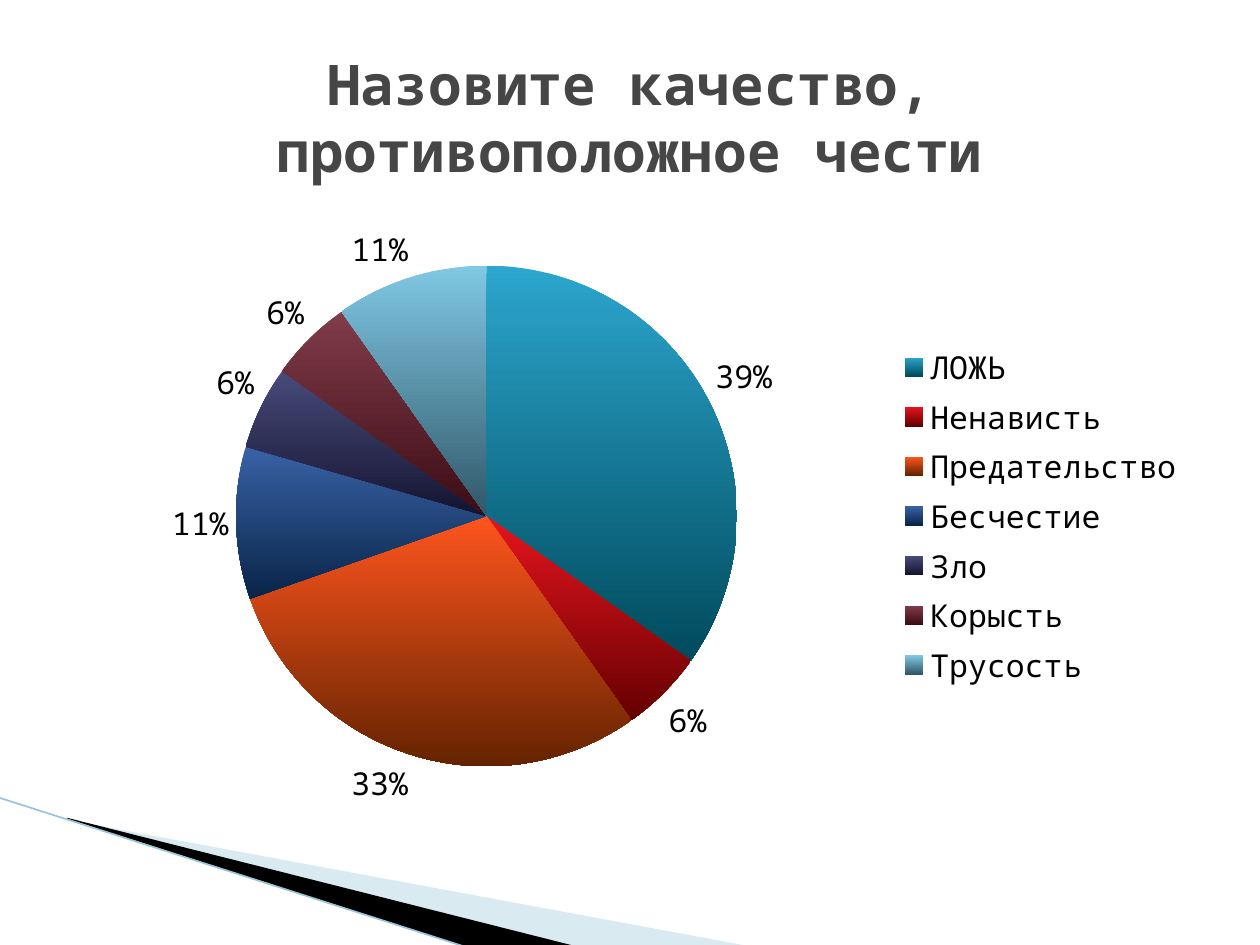
"""Build a survey slide with a title, a pie chart and corner wedges."""
from typing import NamedTuple

from lxml.etree import SubElement
from pptx import Presentation
from pptx.chart.data import CategoryChartData as ChartData
from pptx.dml.color import RGBColor
from pptx.enum.chart import XL_CHART_TYPE as Kind
from pptx.enum.chart import XL_LABEL_POSITION as Spot
from pptx.enum.chart import XL_LEGEND_POSITION as Side
from pptx.enum.shapes import MSO_CONNECTOR as Link
from pptx.enum.text import MSO_ANCHOR as Anchor
from pptx.enum.text import PP_ALIGN as Align
from pptx.oxml.ns import qn
from pptx.util import Inches, Pt

FACE = "Noto Sans Mono"
BLACK = RGBColor(0, 0, 0)
GREY = RGBColor(0x46, 0x46, 0x46)
PALE = RGBColor(0xA0, 0xCB, 0xDC)
EDGE = RGBColor(0x97, 0xC5, 0xD8)


class Slice(NamedTuple):
    name: str
    share: float
    top: RGBColor
    base: RGBColor


class Wedge(NamedTuple):
    points: list[tuple[float, float]]
    fill: RGBColor
    alpha: int


SLICES = [
    Slice("ЛОЖЬ", 0.39, RGBColor(0x2C, 0xA6, 0xCE), RGBColor(0x00, 0x4A, 0x5C)),
    Slice("Ненависть", 0.06, RGBColor(0xE6, 0x14, 0x1E), RGBColor(0x64, 0x00, 0x00)),
    Slice("Предательство", 0.33, RGBColor(0xFF, 0x55, 0x1E), RGBColor(0x64, 0x23, 0x00)),
    Slice("Бесчестие", 0.11, RGBColor(0x39, 0x62, 0xA5), RGBColor(0x08, 0x24, 0x48)),
    Slice("Зло", 0.06, RGBColor(0x48, 0x4A, 0x7A), RGBColor(0x14, 0x14, 0x30)),
    Slice("Корысть", 0.06, RGBColor(0x80, 0x3C, 0x4A), RGBColor(0x3C, 0x0C, 0x14)),
    Slice("Трусость", 0.11, RGBColor(0x80, 0xC8, 0xE4), RGBColor(0x30, 0x58, 0x68)),
]
WEDGES = [
    Wedge([(0.55, 6.51), (5.95, 7.51), (4.56, 7.51), (0.55, 6.5)], PALE, 40),
    Wedge([(0.53, 6.49), (4.57, 7.51), (3.72, 7.52), (0.54, 6.5)], BLACK, 100),
]


def put_text(shape, text: str, *, size: int, color: RGBColor, bold: bool = False) -> None:
    frame = shape.text_frame
    frame.word_wrap = True
    frame.vertical_anchor = Anchor.MIDDLE
    para = frame.paragraphs[0]
    para.alignment = Align.CENTER
    run = para.add_run()
    run.text = text
    font = run.font
    font.name, font.size, font.bold = FACE, Pt(size), bold
    font.color.rgb = color


def draw_wedge(shapes, wedge: Wedge) -> None:
    first, *rest = [(Inches(x), Inches(y)) for x, y in wedge.points]
    pen = shapes.build_freeform(*first)
    pen.add_line_segments(rest)
    shape = pen.convert_to_shape()
    shape.shadow.inherit = False
    shape.line.fill.background()
    shape.fill.solid()
    shape.fill.fore_color.rgb = wedge.fill
    if wedge.alpha < 100:
        tint = shape.fill._xPr.find(".//" + qn("a:srgbClr"))
        SubElement(tint, qn("a:alpha"), val=str(wedge.alpha * 1000))


def draw_edge(shapes) -> None:
    edge = shapes.add_connector(
        Link.STRAIGHT, Inches(-0.01), Inches(6.33), Inches(3.71), Inches(7.52))
    edge.line.color.rgb = EDGE
    edge.line.width = Pt(0.95)
    SubElement(edge._element.spPr, qn("a:effectLst"))


def draw_pie(shapes, slices: list[Slice]) -> None:
    data = ChartData(number_format="0%")
    data.categories = [part.name for part in slices]
    data.add_series("Series 1", [part.share for part in slices])
    chart = shapes.add_chart(
        Kind.PIE, Inches(0.5), Inches(1.62), Inches(9), Inches(4.95), data).chart
    chart.has_title = False
    chart.font.name, chart.font.size = FACE, Pt(18)
    chart.font.color.rgb = BLACK
    chart.has_legend = True
    chart.legend.position = Side.RIGHT
    chart.legend.include_in_layout = False
    plot = chart.plots[0]
    plot.vary_by_categories = True
    plot.has_data_labels = True
    labels = plot.data_labels
    labels.show_value = True
    labels.show_percentage = False
    labels.number_format = "0%"
    labels.number_format_is_linked = False
    labels.position = Spot.OUTSIDE_END
    for index, part in enumerate(slices):
        fill = plot.series[0].points[index].format.fill
        fill.gradient()
        fill.gradient_angle = 270
        for stop, color in zip(fill.gradient_stops, (part.top, part.base)):
            stop.color.rgb = color


def main() -> None:
    deck = Presentation()
    deck.slide_width, deck.slide_height = Inches(10), Inches(7.5)
    slide = deck.slides.add_slide(deck.slide_layouts[5])
    shapes = slide.shapes
    for wedge in WEDGES:
        draw_wedge(shapes, wedge)
    draw_edge(shapes)
    draw_pie(shapes, SLICES)
    title = shapes.title
    title.left, title.top = Inches(0.5), Inches(0.3)
    title.width, title.height = Inches(9), Inches(1.25)
    put_text(title, "Назовите качество, противоположное чести",
             size=32, color=GREY, bold=True)
    deck.save("out.pptx")


if __name__ == "__main__":
    main()
